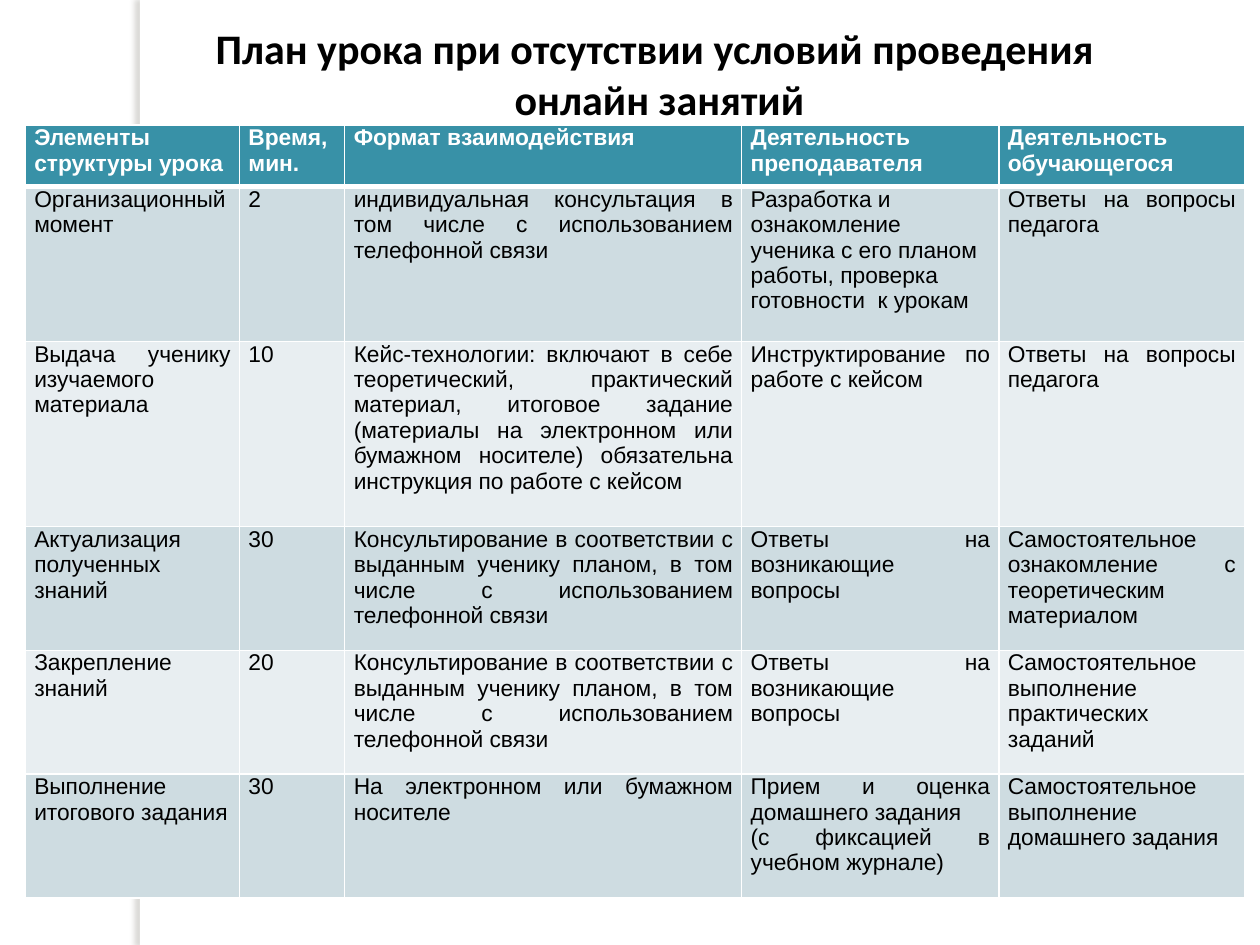
from lxml import etree
from pptx import Presentation
from pptx.dml.color import RGBColor
from pptx.enum.shapes import MSO_SHAPE
from pptx.enum.text import MSO_ANCHOR, MSO_AUTO_SIZE, PP_ALIGN
from pptx.oxml import parse_xml
from pptx.oxml.ns import nsdecls, qn
from pptx.util import Pt

RECT = MSO_SHAPE.RECTANGLE
TOP = MSO_ANCHOR.TOP
GROW = MSO_AUTO_SIZE.SHAPE_TO_FIT_TEXT
LEFT, CENTER, JUSTIFY = PP_ALIGN.LEFT, PP_ALIGN.CENTER, PP_ALIGN.JUSTIFY

WHITE = RGBColor(0xFF, 0xFF, 0xFF)
BLACK = RGBColor(0, 0, 0)
TEAL = RGBColor(0x38, 0x91, 0xA7)
BANDS = RGBColor(0xE8, 0xEE, 0xF1), RGBColor(0xCE, 0xDC, 0xE1)
SHADOW = RGBColor(0x73, 0x6F, 0x63)

# Content
TITLE = "План урока при отсутствии условий проведения \nонлайн занятий"
CONSULTING = ("Консультирование в соответствии с выданным ученику планом, "
              "в том числе с использованием телефонной связи")
TEACHER_ANSWERS = "Ответы на возникающие вопросы"
PUPIL_ANSWERS = "Ответы на вопросы педагога"
ROWS = [
    ("Элементы структуры урока", "Время, мин.", "Формат взаимодействия ",
     "Деятельность преподавателя", "Деятельность обучающегося"),
    ("Организационный момент", "2",
     "индивидуальная консультация в том числе с использованием телефонной связи",
     "Разработка и ознакомление ученика с его планом работы, "
     "проверка готовности  к урокам", PUPIL_ANSWERS),
    ("Выдача ученику изучаемого материала", "10",
     "Кейс-технологии: включают в себе теоретический, практический материал, "
     "итоговое задание (материалы на электронном или бумажном носителе) "
     "обязательна инструкция по работе с кейсом",
     "Инструктирование по работе с кейсом", PUPIL_ANSWERS),
    ("Актуализация полученных\nзнаний", "30", CONSULTING, TEACHER_ANSWERS,
     "Самостоятельное ознакомление с теоретическим материалом"),
    ("Закрепление знаний ", "20", CONSULTING, TEACHER_ANSWERS,
     "Самостоятельное выполнение практических заданий"),
    ("Выполнение итогового задания", "30", "На электронном или бумажном носителе",
     "Прием и оценка домашнего задания\n(с фиксацией в учебном журнале)",
     "Самостоятельное выполнение домашнего задания "),
]
COL_WIDTHS = [122.4, 60.2, 226.8, 147, 140.4]
ROW_HEIGHTS = [35.2, 88.5, 105.8, 70.7, 70.7, 70.7]
LEFT_ALIGNED = (1, 3)


def write(tf, text, font, size, color, bold, align):
    tf.text = text
    for p in tf.paragraphs:
        p.alignment = align
        for r in p.runs:
            r.font.name, r.font.size, r.font.bold = font, Pt(size), bold
            r.font.color.rgb = color


def set_borders(cell, **widths):
    tc_pr = cell._tc.get_or_add_tcPr()
    for i, side in enumerate("LRTB"):
        ln = etree.Element(qn(f"a:ln{side}"), w=str(Pt(widths.get(side, 1))))
        fill = etree.SubElement(ln, qn("a:solidFill"))
        etree.SubElement(fill, qn("a:srgbClr"), val=str(WHITE))
        tc_pr.insert(i, ln)


prs = Presentation()
prs.slide_width, prs.slide_height = Pt(720), Pt(540)
s = prs.slides.add_slide(prs.slide_layouts[6])

# Vertical strip with a soft shadow on its left
strip = s.shapes.add_shape(RECT, Pt(79.9), Pt(0), Pt(5.8), Pt(540))
strip.fill.solid()
strip.fill.fore_color.rgb = WHITE
strip.line.fill.background()
strip._element.spPr.append(parse_xml(
    f'<a:effectLst {nsdecls("a")}><a:outerShdw blurRad="{Pt(3)}" dist="{Pt(3)}" '
    f'dir="10800000" algn="tl" rotWithShape="0"><a:srgbClr val="{SHADOW}">'
    '<a:alpha val="25000"/></a:srgbClr></a:outerShdw></a:effectLst>'))

# Lesson plan table
table = s.shapes.add_table(len(ROWS), len(COL_WIDTHS), Pt(14.4), Pt(71.5),
                           Pt(sum(COL_WIDTHS)), Pt(sum(ROW_HEIGHTS))).table
for column, width in zip(table.columns, COL_WIDTHS):
    column.width = Pt(width)
for row, height in zip(table.rows, ROW_HEIGHTS):
    row.height = Pt(height)
for i, texts in enumerate(ROWS):
    header = i == 0
    for j, text in enumerate(texts):
        cell = table.cell(i, j)
        cell.margin_left = cell.margin_right = Pt(5.2)
        cell.margin_top = cell.margin_bottom = Pt(0)
        cell.vertical_anchor = TOP
        cell.fill.solid()
        cell.fill.fore_color.rgb = TEAL if header else BANDS[i % 2]
        set_borders(cell, T=3 if i == 1 else 1, B=3 if header else 1)
        write(cell.text_frame, text, "Arial", 13, WHITE if header else BLACK,
              header, LEFT if (i, j) == LEFT_ALIGNED else JUSTIFY)

# Title
tf = s.shapes.add_textbox(Pt(25.2), Pt(9.4), Pt(703.4), Pt(65.5)).text_frame
tf.word_wrap = True
tf.auto_size = GROW
write(tf, TITLE, "Calibri", 24, BLACK, True, CENTER)

prs.save("out.pptx")
